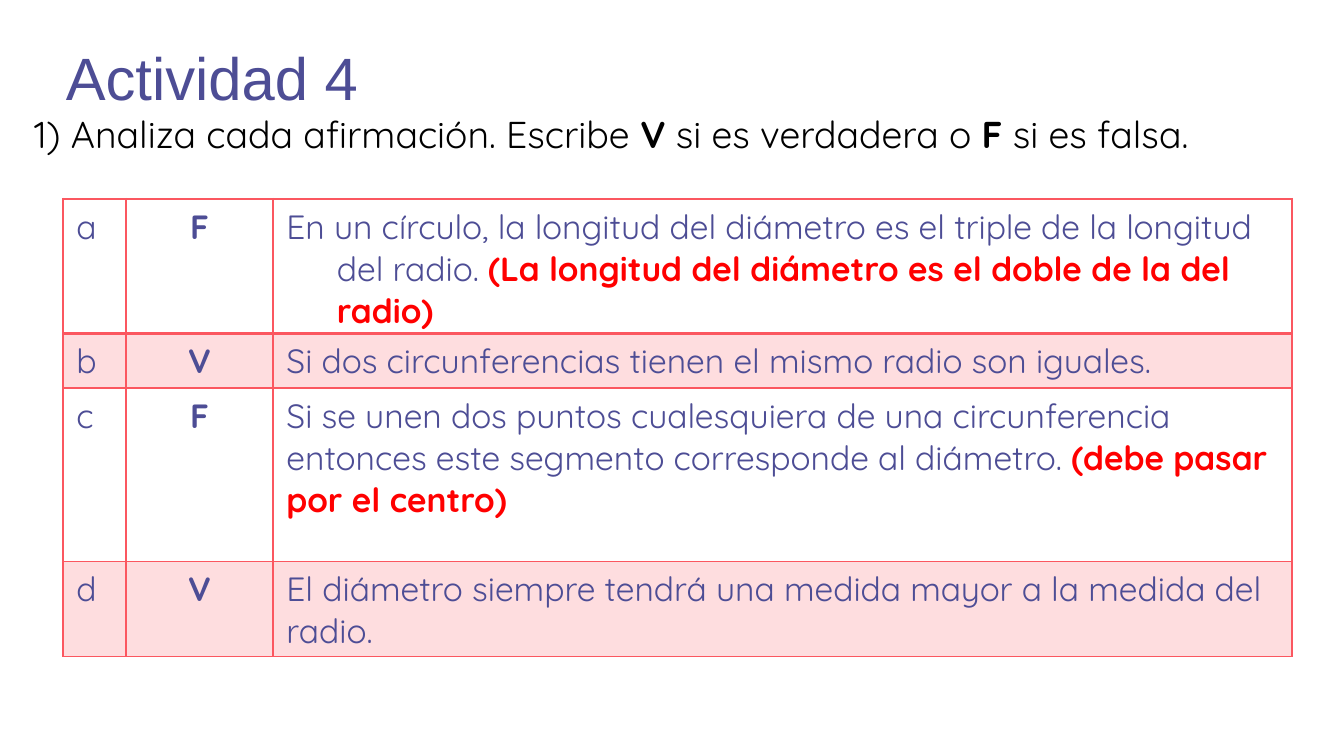
"""Builds the true-or-false activity slide about circles."""
from dataclasses import dataclass

from lxml.etree import SubElement
from pptx import Presentation
from pptx.dml.color import RGBColor
from pptx.enum.text import MSO_ANCHOR, MSO_AUTO_SIZE, PP_ALIGN
from pptx.oxml.ns import qn
from pptx.util import Pt

PX = 9525


@dataclass(frozen=True)
class Theme:
    title_font: str = "Arial"
    body_font: str = "Quicksand"
    title_size: int = 32
    prompt_size: int = 20
    table_size: int = 18
    violet: str = "4D4D95"
    black: str = "000000"
    red: str = "FF0000"
    coral: str = "FB5760"
    band_alpha: int = 20000


class ActivitySlide:
    def __init__(self, presentation, theme):
        self.theme = theme
        self.slide = presentation.slides.add_slide(presentation.slide_layouts[5])

    def place(self, shape, left, top, width, height):
        shape.left, shape.top = left * PX, top * PX
        shape.width, shape.height = width * PX, height * PX

    def style(self, paragraph, font, size, color, align=PP_ALIGN.LEFT):
        paragraph.alignment = align
        paragraph.font.name = font
        paragraph.font.size = Pt(size)
        paragraph.font.color.rgb = RGBColor.from_string(color)

    def add_runs(self, paragraph, parts, accent=None):
        for text, bold in parts:
            run = paragraph.add_run()
            run.text = text
            if bold:
                run.font.bold = True
                if accent:
                    run.font.color.rgb = RGBColor.from_string(accent)

    def title(self, text, *box):
        heading = self.slide.shapes.title
        self.place(heading, *box)
        frame = heading.text_frame
        frame.text = text
        frame.auto_size = MSO_AUTO_SIZE.NONE
        frame.vertical_anchor = MSO_ANCHOR.TOP
        frame.margin_left = frame.margin_right = 10 * PX
        frame.margin_top, frame.margin_bottom = 14 * PX, 0
        self.style(frame.paragraphs[0], self.theme.title_font,
                   self.theme.title_size, self.theme.violet)

    def prompt(self, parts, *box):
        frame = self.slide.shapes.add_textbox(*(n * PX for n in box)).text_frame
        frame.word_wrap = True
        frame.auto_size = MSO_AUTO_SIZE.SHAPE_TO_FIT_TEXT
        self.add_runs(frame.paragraphs[0], parts)
        self.style(frame.paragraphs[0], self.theme.body_font,
                   self.theme.prompt_size, self.theme.black)

    def border(self, cell, side, points):
        line = SubElement(cell._tc.get_or_add_tcPr(), qn(f"a:ln{side}"), w=str(Pt(points)))
        fill = SubElement(line, qn("a:solidFill"))
        SubElement(fill, qn("a:srgbClr"), val=self.theme.coral)

    def shade(self, cell, banded):
        if not banded:
            cell.fill.background()
            return
        cell.fill.solid()
        cell.fill.fore_color.rgb = RGBColor.from_string(self.theme.coral)
        tint = cell._tc.tcPr.find(f"{qn('a:solidFill')}/{qn('a:srgbClr')}")
        SubElement(tint, qn("a:alpha"), val=str(self.theme.band_alpha))

    def statements(self, rows, left, top, widths, heights):
        frame = self.slide.shapes.add_table(
            len(rows), len(widths), left * PX, top * PX, sum(widths) * PX, sum(heights) * PX)
        table = frame.table
        table.first_row = table.horz_banding = False
        for column, width in zip(table.columns, widths):
            column.width = width * PX
        for r, (letter, answer, claim) in enumerate(rows):
            table.rows[r].height = heights[r] * PX
            contents = [[(letter, False)], [(answer, True)], claim]
            for c, parts in enumerate(contents):
                cell = table.cell(r, c)
                for side in "LRTB":
                    below_first = (r, side) in ((0, "B"), (1, "T"))
                    self.border(cell, side, 2 if below_first else 1)
                self.shade(cell, r % 2 == 1)
                paragraph = cell.text_frame.paragraphs[0]
                self.add_runs(paragraph, parts, self.theme.red if c == 2 else None)
                self.style(paragraph, self.theme.body_font, self.theme.table_size,
                           self.theme.violet, PP_ALIGN.CENTER if c == 1 else PP_ALIGN.LEFT)
        return table

    def hang(self, cell, indent):
        properties = cell.text_frame.paragraphs[0]._p.get_or_add_pPr()
        properties.set("marL", str(indent * PX))
        properties.set("indent", str(-indent * PX))


def main():
    presentation = Presentation()
    presentation.slide_width, presentation.slide_height = 960 * PX, 540 * PX
    activity = ActivitySlide(presentation, Theme())
    activity.title("Actividad 4", 37, 15, 809, 60)
    activity.prompt([
        ("1) Analiza cada afirmación. Escribe ", False), ("V", True),
        (" si es verdadera o ", False), ("F", True), (" si es falsa.", False),
    ], 15, 75, 893, 42)
    statements = [
        ("a", "F", [
            ("En un círculo, la longitud del diámetro es el triple de la longitud del radio. ", False),
            ("(La longitud del diámetro es el doble de la del radio)", True)]),
        ("b", "V", [("Si dos circunferencias tienen el mismo radio son iguales.", False)]),
        ("c", "F", [
            ("Si se unen dos puntos cualesquiera de una circunferencia entonces este "
             "segmento corresponde al diámetro. ", False),
            ("(debe pasar por el centro)", True)]),
        ("d", "V", [
            ("El diámetro siempre tendrá una medida mayor a la medida del radio.", False)]),
    ]
    table = activity.statements(statements, 45, 142, (45, 105, 728), (96, 39, 124, 68))
    activity.hang(table.cell(0, 2), 36)
    presentation.save("out.pptx")


if __name__ == "__main__":
    main()
